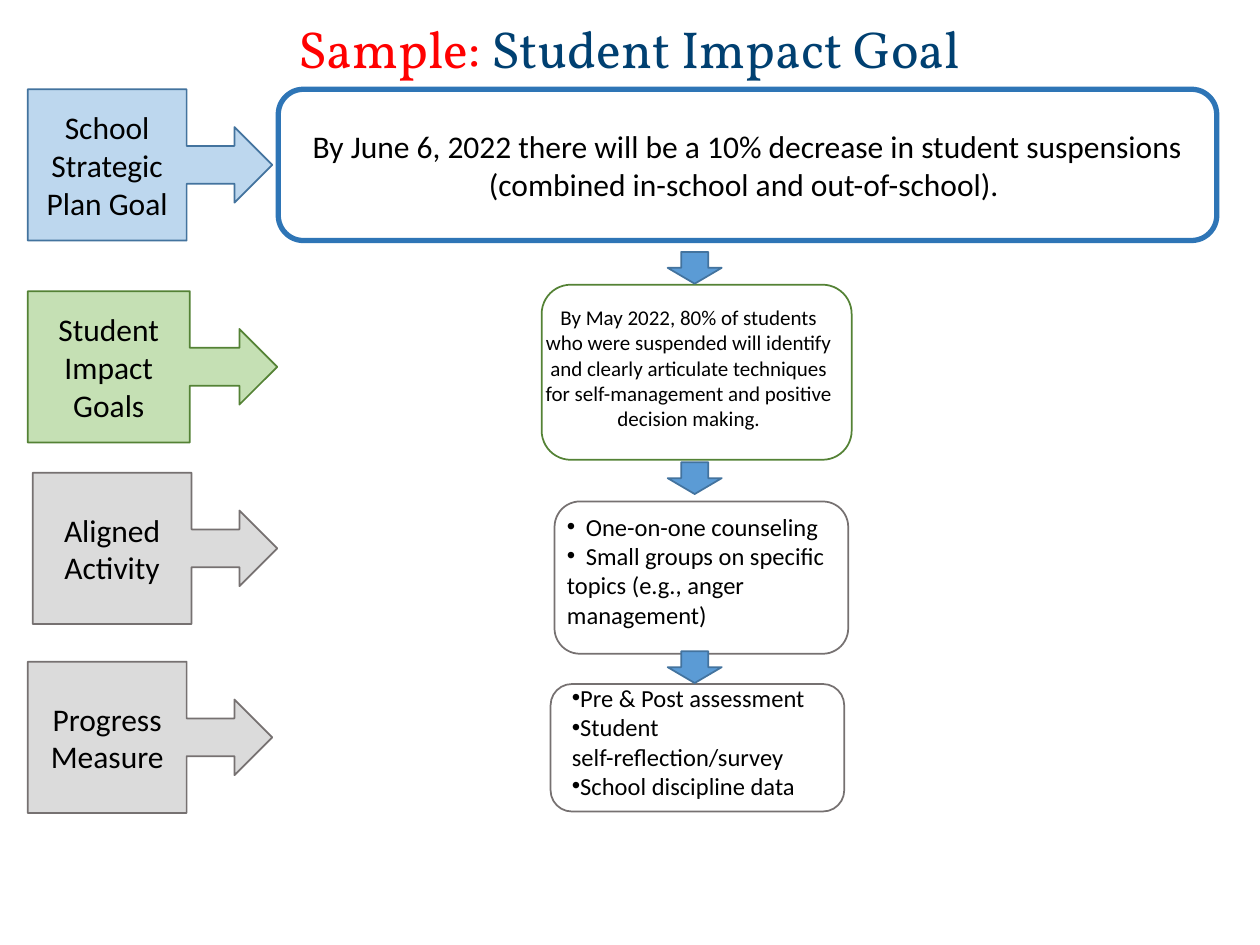
from dataclasses import dataclass
from typing import Optional

from lxml import etree
from pptx import Presentation
from pptx import util as u
from pptx.dml.color import RGBColor
from pptx.enum import shapes, text
from pptx.oxml.ns import qn

HUES = {
    "red": "FF0000", "navy": "004071", "black": "000000",
    "sky": "BDD7EE", "blue": "5B9BD5", "edge": "43739E", "deep": "2E75B6",
    "mint": "C5E0B4", "green": "548235", "pale": "DBDBDB", "gray": "767171",
}
KIND = shapes.MSO_SHAPE
MID = text.PP_ALIGN.CENTER


@dataclass
class Box:
    left: float
    top: float
    wide: float
    high: float

    def cm(self) -> list:
        return [u.Cm(n) for n in (self.left, self.top, self.wide, self.high)]


@dataclass
class Node:
    kind: int
    box: Box
    fill: Optional[str]
    line: str
    words: str = ""
    width: float = 1


@dataclass
class Note:
    box: Box
    lines: list
    size: float
    dots: bool = False
    tab: float = 0  # gap from bullet to text, in cm


def hue(name: str) -> RGBColor:
    return RGBColor.from_string(HUES[name])


def add_run(para, words: str, size: float, tint: str = "black", face: str = "Calibri") -> None:
    run = para.add_run()
    run.text = words
    run.font.size = u.Pt(size)
    run.font.name = face
    run.font.color.rgb = hue(tint)


def add_dot(para, tab: float) -> None:
    props = para._p.get_or_add_pPr()
    props.set("marL", "0")
    props.set("indent", "0")
    etree.SubElement(props, qn("a:buSzPct"), val="98000")
    etree.SubElement(props, qn("a:buFont"), typeface="Arial")
    etree.SubElement(props, qn("a:buChar"), char="•")
    if tab:
        tabs = etree.SubElement(props, qn("a:tabLst"))
        etree.SubElement(tabs, qn("a:tab"), pos=str(u.Cm(tab)), algn="l")


def draw_node(slide, node: Node) -> None:
    shape = slide.shapes.add_shape(node.kind, *node.box.cm())
    shape.shadow.inherit = False
    if node.fill:
        shape.fill.solid()
        shape.fill.fore_color.rgb = hue(node.fill)
    else:
        shape.fill.background()
    shape.line.color.rgb = hue(node.line)
    shape.line.width = u.Pt(node.width)
    if node.words:
        frame = shape.text_frame
        frame.word_wrap = True
        frame.vertical_anchor = text.MSO_ANCHOR.MIDDLE
        frame.paragraphs[0].alignment = MID
        add_run(frame.paragraphs[0], node.words, 18)


def draw_note(slide, note: Note) -> None:
    frame = slide.shapes.add_textbox(*note.box.cm()).text_frame
    frame.word_wrap = True
    for i, words in enumerate(note.lines):
        para = frame.add_paragraph() if i else frame.paragraphs[0]
        if note.dots:
            add_dot(para, note.tab)
        else:
            para.alignment = MID
        add_run(para, "\t" + words if note.tab else words, note.size)


def draw_title(slide) -> None:
    frame = slide.shapes.add_textbox(*Box(0.84, 0.41, 23.7, 1.27).cm()).text_frame
    frame.word_wrap = True
    frame.vertical_anchor = text.MSO_ANCHOR.MIDDLE
    para = frame.paragraphs[0]
    para.alignment = MID
    para.line_spacing = 0.9
    add_run(para, "Sample: ", 29.7, "red", "Vollkorn")
    add_run(para, "Student Impact Goal", 29.7, "navy", "Vollkorn")


TALL = 3.05
CALL, ROUND, DOWN = KIND.RIGHT_ARROW_CALLOUT, KIND.ROUNDED_RECTANGLE, KIND.DOWN_ARROW

NODES = [
    # Row labels
    Node(CALL, Box(0.56, 1.8, 4.93, TALL), "sky", "edge", "School Strategic Plan Goal"),
    Node(CALL, Box(0.56, 5.87, 5.03, TALL), "mint", "green", "Student Impact Goals"),
    Node(CALL, Box(0.66, 9.53, 4.93, TALL), "pale", "gray", "Aligned Activity"),
    Node(CALL, Box(0.56, 13.34, 4.93, TALL), "pale", "gray", "Progress Measure"),
    # Main goal
    Node(ROUND, Box(5.61, 1.8, 18.92, TALL), None, "deep",
         "By June 6, 2022 there will be a 10% decrease in student suspensions "
         "(combined in-school and out-of-school). ", 3),
    # Frames of the steps
    Node(ROUND, Box(10.92, 5.74, 6.25, 3.53), None, "green"),
    Node(ROUND, Box(11.18, 10.11, 5.92, 3.07), None, "gray"),
    Node(ROUND, Box(11.1, 13.79, 5.92, 2.57), None, "gray"),
]
# Arrows between the steps
NODES += [Node(DOWN, Box(13.46, top, 1.09, 0.64), "blue", "edge")
          for top in (5.08, 9.32, 13.13)]

NOTES = [
    Note(Box(10.67, 6.02, 6.43, 2.82),
         ["By May 2022, 80% of students who were suspended will identify and clearly "
          "articulate techniques for self-management and positive decision making."], 12),
    Note(Box(11.18, 10.19, 6.1, 2.64),
         ["One-on-one counseling",
          "Small groups on specific topics (e.g., anger management)"], 14, True, 0.38),
    Note(Box(11.28, 13.64, 6.1, 2.64),
         ["Pre & Post assessment", "Student self-reflection/survey",
          "School discipline data"], 14, True),
]


def main() -> None:
    deck = Presentation()
    deck.slide_width, deck.slide_height = u.Cm(25.4), u.Cm(19.05)
    slide = deck.slides.add_slide(deck.slide_layouts[6])
    draw_title(slide)
    for node in NODES:
        draw_node(slide, node)
    for note in NOTES:
        draw_note(slide, note)
    deck.save("out.pptx")


if __name__ == "__main__":
    main()
